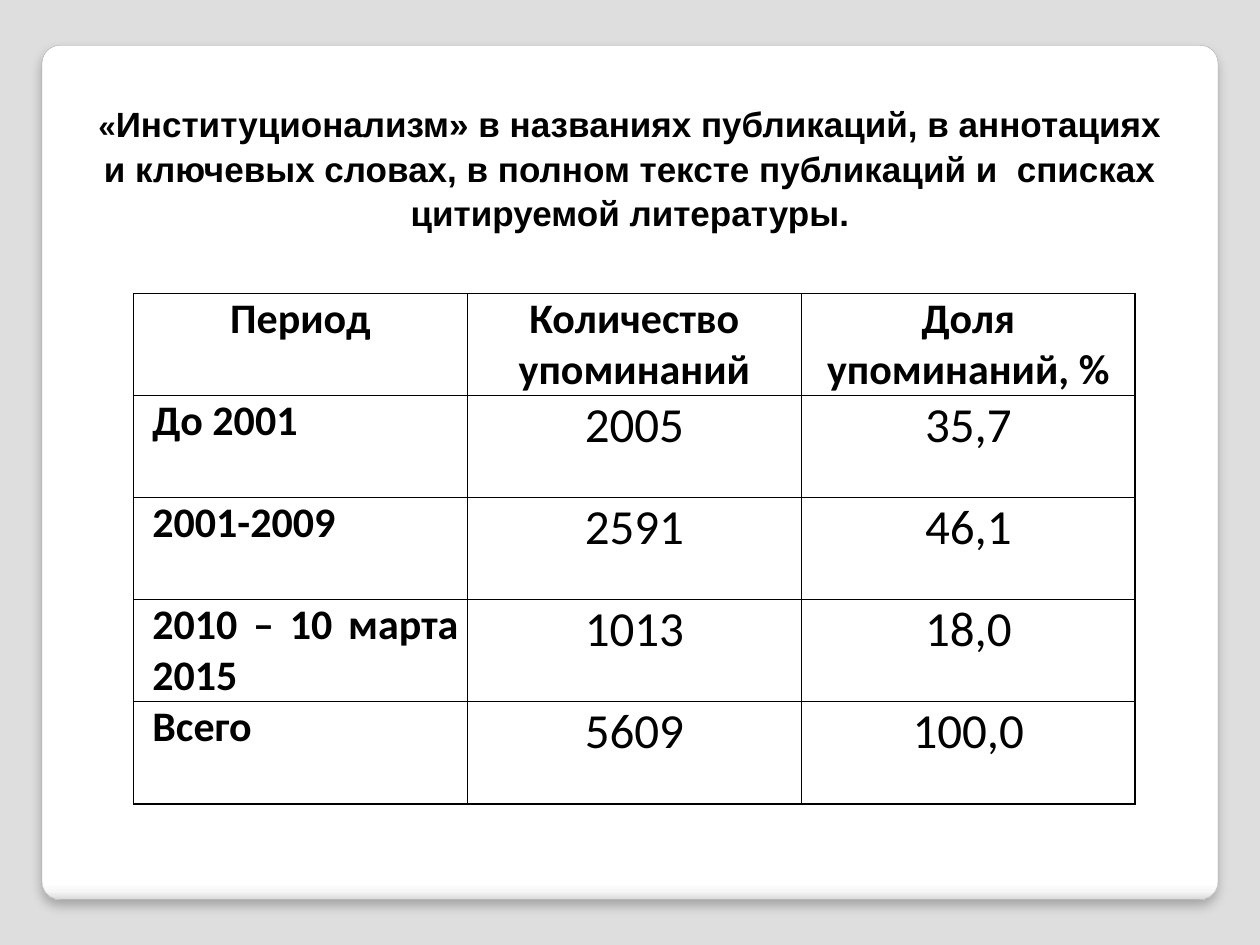
from dataclasses import dataclass
from lxml import etree
from pptx import Presentation, util as u
from pptx.dml.color import RGBColor
from pptx.enum import shapes, text
from pptx.oxml import parse_xml
from pptx.oxml.ns import qn

WIDE, HIGH = 10, 7.5
COLS, ROWS = 3, 5
COL, ROW = 2.65, 0.81
HUES = {"back": "DEDEDE", "edge": "A4A4A4", "ink": "000000"}
STOPS = [(0, "FFFFFF"), (98, "FFFFFF"), (99, "F7F7F7"), (100, "DADADA")]
NS = 'xmlns:a="http://schemas.openxmlformats.org/drawingml/2006/main"'


@dataclass
class Style:
    font: str
    size: float
    bold: bool


@dataclass
class Line:
    span: str
    count: str
    share: str


HEAD = Style("Calibri", 24, True)
DATA = Style("Calibri", 28, False)
LINES = [
    Line("Период", "Количество упоминаний", "Доля упоминаний, %"),
    Line("До 2001", "2005", "35,7"),
    Line("2001-2009", "2591", "46,1"),
    Line("2010 – 10 марта 2015", "1013", "18,0"),
    Line("Всего", "5609", "100,0"),
]
TITLE = [
    ("«", Style("Arial", 18, True)),
    ("Институционализм» в названиях публикаций, в аннотациях и ключевых "
     "словах, в полном тексте публикаций и  списках цитируемой литературы.",
     Style("Arial", 20, True)),
]


def hue(name: str) -> RGBColor:
    return RGBColor.from_string(HUES[name])


def add_run(para, words: str, style: Style) -> None:
    run = para.add_run()
    run.text = words
    font = run.font
    font.name, font.size, font.bold = style.font, u.Pt(style.size), style.bold
    font.color.rgb = hue("ink")


def draw_card(slide) -> None:
    left, top = WIDE / 30, HIGH * 0.048
    card = slide.shapes.add_shape(
        shapes.MSO_SHAPE.ROUNDED_RECTANGLE, u.Inches(left), u.Inches(top),
        u.Inches(WIDE - 2 * left), u.Inches(HIGH - 2 * top))
    card.adjustments[0] = 0.021
    card.line.color.rgb = hue("edge")
    card.line.width = u.Pt(0.16)
    stops = "".join(f'<a:gs pos="{pos * 1000}"><a:srgbClr val="{tone}"/></a:gs>'
                    for pos, tone in STOPS)
    props = card._element.spPr
    props.find(qn("a:prstGeom")).addnext(parse_xml(
        f'<a:gradFill {NS}><a:gsLst>{stops}</a:gsLst>'
        '<a:lin ang="5400000" scaled="0"/></a:gradFill>'))
    props.append(parse_xml(
        f'<a:effectLst {NS}><a:outerShdw blurRad="{u.Pt(6)}" dist="{u.Pt(4)}" '
        'dir="5400000" algn="tl" rotWithShape="0">'
        f'<a:srgbClr val="{HUES["ink"]}"><a:alpha val="25000"/></a:srgbClr>'
        '</a:outerShdw></a:effectLst>'))
    slide.shapes._spTree.insert(2, card._element)


def draw_title(slide) -> None:
    title = slide.shapes.title
    title.left, title.top = u.Inches(WIDE / 15), u.Inches(0.77)
    title.width, title.height = u.Inches(WIDE * 13 / 15), u.Inches(1.11)
    frame = title.text_frame
    frame.word_wrap = True
    frame.auto_size = text.MSO_AUTO_SIZE.SHAPE_TO_FIT_TEXT
    frame.vertical_anchor = text.MSO_ANCHOR.MIDDLE
    para = frame.paragraphs[0]
    para.alignment = text.PP_ALIGN.CENTER
    para.line_spacing = 1.06
    for words, style in TITLE:
        add_run(para, words, style)


def rule_cell(cell) -> None:
    props = cell._tc.get_or_add_tcPr()
    for side in ("lnL", "lnR", "lnT", "lnB"):
        edge = etree.SubElement(props, qn(f"a:{side}"), w=str(u.Pt(1)))
        fill = etree.SubElement(edge, qn("a:solidFill"))
        etree.SubElement(fill, qn("a:srgbClr"), val=HUES["ink"])


def fill_cell(cell, words: str, head: bool, first: bool) -> None:
    label = first and not head
    rule_cell(cell)
    cell.fill.background()
    cell.margin_left = u.Inches(0.15 if label else 0.07)
    cell.margin_right = u.Inches(0.07)
    cell.margin_top = cell.margin_bottom = 0
    para = cell.text_frame.paragraphs[0]
    para.alignment = text.PP_ALIGN.JUSTIFY if label else text.PP_ALIGN.CENTER
    add_run(para, words, HEAD if head or first else DATA)


def draw_table(slide) -> None:
    table = slide.shapes.add_table(
        ROWS, COLS, u.Inches(1.06), u.Inches(2.33),
        u.Inches(COLS * COL), u.Inches(ROWS * ROW)).table
    table.first_row = table.horz_banding = False
    for col in table.columns:
        col.width = u.Inches(COL)
    for r, line in enumerate(LINES):
        table.rows[r].height = u.Inches(ROW)
        for c, words in enumerate((line.span, line.count, line.share)):
            fill_cell(table.cell(r, c), words, r == 0, c == 0)


def main() -> None:
    deck = Presentation()
    deck.slide_width, deck.slide_height = u.Inches(WIDE), u.Inches(HIGH)
    slide = deck.slides.add_slide(deck.slide_layouts[5])
    back = slide.background.fill
    back.solid()
    back.fore_color.rgb = hue("back")
    draw_card(slide)
    draw_table(slide)
    draw_title(slide)
    deck.save("out.pptx")


if __name__ == "__main__":
    main()
